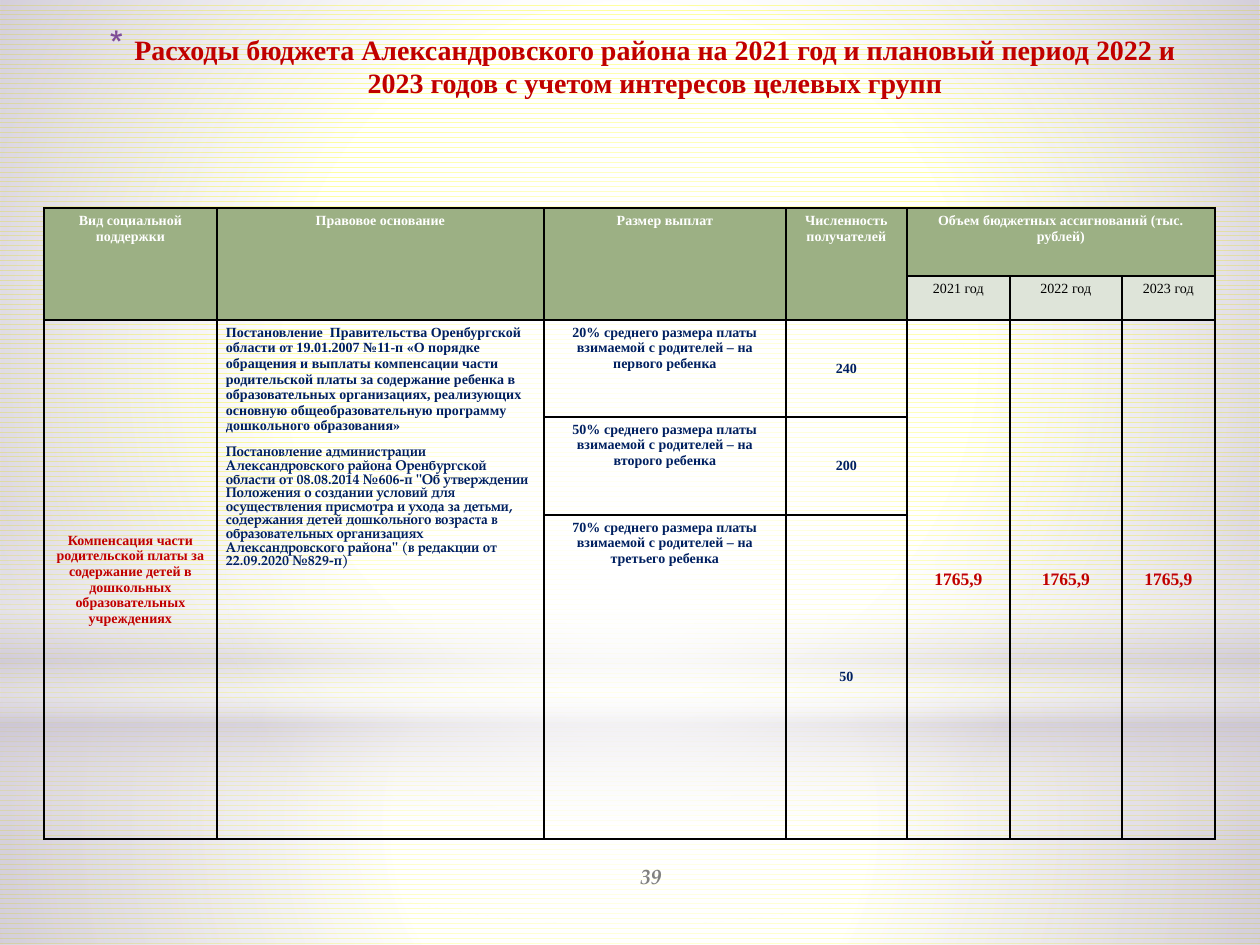
from lxml import etree
from pptx import Presentation
from pptx.dml.color import RGBColor
from pptx.enum.dml import MSO_PATTERN
from pptx.enum.shapes import MSO_SHAPE
from pptx.enum.text import MSO_ANCHOR, PP_ALIGN
from pptx.oxml.ns import qn
from pptx.util import Pt

PX = 914400 // 126
PAGE_WIDTH, PAGE_HEIGHT = 1260, 945
TITLE_ONLY = 5

WAVE = MSO_PATTERN.WAVE
RECTANGLE, OVAL = MSO_SHAPE.RECTANGLE, MSO_SHAPE.OVAL
TOP, MIDDLE = MSO_ANCHOR.TOP, MSO_ANCHOR.MIDDLE
LEFT, CENTER = PP_ALIGN.LEFT, PP_ALIGN.CENTER

SERIF, PAGELLA = "Times New Roman", "TeX Gyre Pagella"
WHITE = RGBColor(0xFF, 0xFF, 0xFF)
BLACK = RGBColor(0, 0, 0)
YELLOW = RGBColor(0xFF, 0xFF, 0)
LILAC = RGBColor(0xC9, 0xC2, 0xD1)
PURPLE = RGBColor(0x7E, 0x4E, 0x99)
RED = RGBColor(0xC0, 0, 0)
NAVY = RGBColor(0, 0x20, 0x60)
GREY = RGBColor(0x80, 0x80, 0x80)
GREEN = RGBColor(0x9C, 0xB0, 0x84)
PALE_GREEN = RGBColor(0xDE, 0xE4, 0xD9)

TITLE = ("Расходы бюджета Александровского района на 2021 год и плановый период "
         "2022 и 2023 годов с учетом интересов целевых групп")
COLUMN_WIDTHS = [173, 327, 242, 121, 103, 112, 93]
ROW_HEIGHTS = [68, 44, 97, 98, 324]
HEADINGS = ["Вид социальной поддержки", "Правовое основание", "Размер выплат",
            "Численность получателей", "Объем бюджетных ассигнований (тыс. рублей)"]
YEARS = [("2021 год", "1765,9"), ("2022 год", "1765,9"), ("2023 год", "1765,9")]
SUPPORT = ("Компенсация части родительской платы за содержание детей в "
           "дошкольных образовательных учреждениях")
REGION_ACT = ("Постановление  Правительства Оренбургской области от 19.01.2007 №11-п "
              "«О порядке обращения и выплаты компенсации части родительской платы за "
              "содержание ребенка в образовательных организациях, реализующих основную "
              "общеобразовательную программу дошкольного образования»")
DISTRICT_ACT = ("Постановление администрации Александровского района Оренбургской области "
                "от 08.08.2014 №606-п \"Об утверждении Положения о создании условий для "
                "осуществления присмотра и ухода за детьми, содержания детей дошкольного "
                "возраста в образовательных организациях Александровского района\" "
                "(в редакции от 22.09.2020 №829-п)")
PAYMENTS = [("20%", "первого", "240"), ("50%", "второго", "200"), ("70%", "третьего", "50")]


def add_xml(parent, tag, **attributes):
    return etree.SubElement(parent, qn(tag), attributes)


def write(para, text, size=8, color=NAVY, bold=True, italic=False, font=SERIF,
          align=CENTER, before=0, after=0, spacing=None):
    """Write one formatted span into a paragraph."""
    para.alignment = align
    para.space_before, para.space_after = Pt(before), Pt(after)
    if spacing:
        para.line_spacing = spacing
    span = para.add_run()
    span.text = text
    span.font.size, span.font.name = Pt(size), font
    span.font.bold, span.font.italic = bold, italic
    span.font.color.rgb = color


def add_glow(page, kind, place, stops, angle=None):
    """Add a translucent gradient shape, radial unless an angle is given."""
    shape = page.shapes.add_shape(kind, *(value * PX for value in place))
    shape.shadow.inherit = False
    shape.line.fill.background()
    shape.fill.background()
    properties = shape._element.spPr
    no_fill = properties.find(qn("a:noFill"))
    gradient = etree.Element(qn("a:gradFill"), {"rotWithShape": "1"})
    properties.replace(no_fill, gradient)
    stop_list = add_xml(gradient, "a:gsLst")
    for position, color, opacity in stops:
        stop = add_xml(stop_list, "a:gs", pos=str(position * 1000))
        tint = add_xml(stop, "a:srgbClr", val=str(color))
        add_xml(tint, "a:alpha", val=str(opacity * 1000))
    if angle is not None:
        add_xml(gradient, "a:lin", ang=str(angle * 60000), scaled="0")
    else:
        circle = add_xml(gradient, "a:path", path="circle")
        add_xml(circle, "a:fillToRect", **dict.fromkeys("ltrb", "50000"))


def add_backdrop(page):
    fill = page.background.fill
    fill.patterned()
    fill.pattern = WAVE
    fill.fore_color.rgb, fill.back_color.rgb = YELLOW, WHITE
    add_glow(page, RECTANGLE, (0, 703, PAGE_WIDTH, 242),
             [(0, WHITE, 91), (37, WHITE, 76), (100, LILAC, 79)])
    add_glow(page, RECTANGLE, (0, 0, PAGE_WIDTH, 703),
             [(0, WHITE, 89), (48, WHITE, 62), (100, LILAC, 79)])
    add_glow(page, RECTANGLE, (0, 519, PAGE_WIDTH, 315),
             [(0, WHITE, 0), (29, WHITE, 30), (45, LILAC, 40),
              (55, WHITE, 26), (65, LILAC, 60), (100, WHITE, 0)], angle=90)
    add_glow(page, OVAL, (0, 221, PAGE_WIDTH, 703), [(0, WHITE, 100), (56, WHITE, 0)])


def add_title(page):
    title = page.shapes.title
    title._element.getparent().append(title._element)  # in front of the backdrop
    title.left, title.top, title.width, title.height = (
        value * PX for value in (64, 26, 1150, 81))
    title.text_frame.vertical_anchor = TOP
    para = title.text_frame.paragraphs[0]
    write(para, TITLE, size=16, color=RED, before=3, after=3)
    properties = para._p.get_or_add_pPr()
    properties.set("marL", str(32 * PX))
    properties.set("indent", str(-25 * PX))
    bullet_color = add_xml(properties, "a:buClr")
    add_xml(bullet_color, "a:srgbClr", val=str(PURPLE))
    add_xml(properties, "a:buSzPct", val="130000")
    add_xml(properties, "a:buChar", char="*")


def add_page_number(page):
    box = page.shapes.add_textbox(*(value * PX for value in (525, 851, 252, 50)))
    box.text_frame.word_wrap = True
    box.text_frame.vertical_anchor = MIDDLE
    write(box.text_frame.paragraphs[0], "39", size=12, color=GREY, italic=True, font=PAGELLA)


def style_cell(cell):
    """Clear the fill and draw black borders of one point."""
    properties = cell._tc.get_or_add_tcPr()
    for side in ("L", "R", "T", "B"):
        border = add_xml(properties, "a:ln" + side, w=str(Pt(1)))
        add_xml(add_xml(border, "a:solidFill"), "a:srgbClr", val=str(BLACK))
    cell.fill.background()


def fill_cell(table, row, column, text, rows=1, columns=1, anchor=TOP, fill=None,
              insets=(9, 5, 9, 5), **text_format):
    cell = table.cell(row, column)
    if rows > 1 or columns > 1:
        cell.merge(table.cell(row + rows - 1, column + columns - 1))
    cell.vertical_anchor = anchor
    cell.margin_left, cell.margin_top, cell.margin_right, cell.margin_bottom = (
        value * PX for value in insets)
    if fill is not None:
        cell.fill.solid()
        cell.fill.fore_color.rgb = fill
    write(cell.text_frame.paragraphs[0], text, **text_format)
    return cell


def add_support_table(page):
    table = page.shapes.add_table(
        len(ROW_HEIGHTS), len(COLUMN_WIDTHS), 44 * PX, 208 * PX,
        sum(COLUMN_WIDTHS) * PX, sum(ROW_HEIGHTS) * PX).table
    table.first_row = table.horz_banding = False
    for column, width in zip(table.columns, COLUMN_WIDTHS):
        column.width = width * PX
    for row, height in zip(table.rows, ROW_HEIGHTS):
        row.height = height * PX
    for cell in table.iter_cells():
        style_cell(cell)

    for column, heading in enumerate(HEADINGS):
        is_last = column == len(HEADINGS) - 1
        fill_cell(table, 0, column, heading, rows=1 if is_last else 2,
                  columns=3 if is_last else 1, fill=GREEN, color=WHITE)
    for column, (year, amount) in enumerate(YEARS, start=4):
        fill_cell(table, 1, column, year, fill=PALE_GREEN, color=BLACK, bold=False)
        fill_cell(table, 2, column, amount, rows=3, anchor=MIDDLE,
                  insets=(1, 1, 1, 0), size=10, color=RED)

    fill_cell(table, 2, 0, SUPPORT, rows=3, anchor=MIDDLE, color=RED)
    acts = fill_cell(table, 2, 1, REGION_ACT, rows=3, align=LEFT)
    write(acts.text_frame.add_paragraph(), DISTRICT_ACT, font=PAGELLA, align=LEFT,
          before=7.5, spacing=Pt(7.8))
    for row, (share, child, recipients) in enumerate(PAYMENTS, start=2):
        fill_cell(table, row, 2,
                  f"{share} среднего размера платы взимаемой с родителей – на {child} ребенка")
        fill_cell(table, row, 3, recipients, anchor=MIDDLE)


def main():
    deck = Presentation()
    deck.slide_width, deck.slide_height = PAGE_WIDTH * PX, PAGE_HEIGHT * PX
    page = deck.slides.add_slide(deck.slide_layouts[TITLE_ONLY])
    add_backdrop(page)
    add_page_number(page)
    add_title(page)
    add_support_table(page)
    deck.save("out.pptx")


if __name__ == "__main__":
    main()
